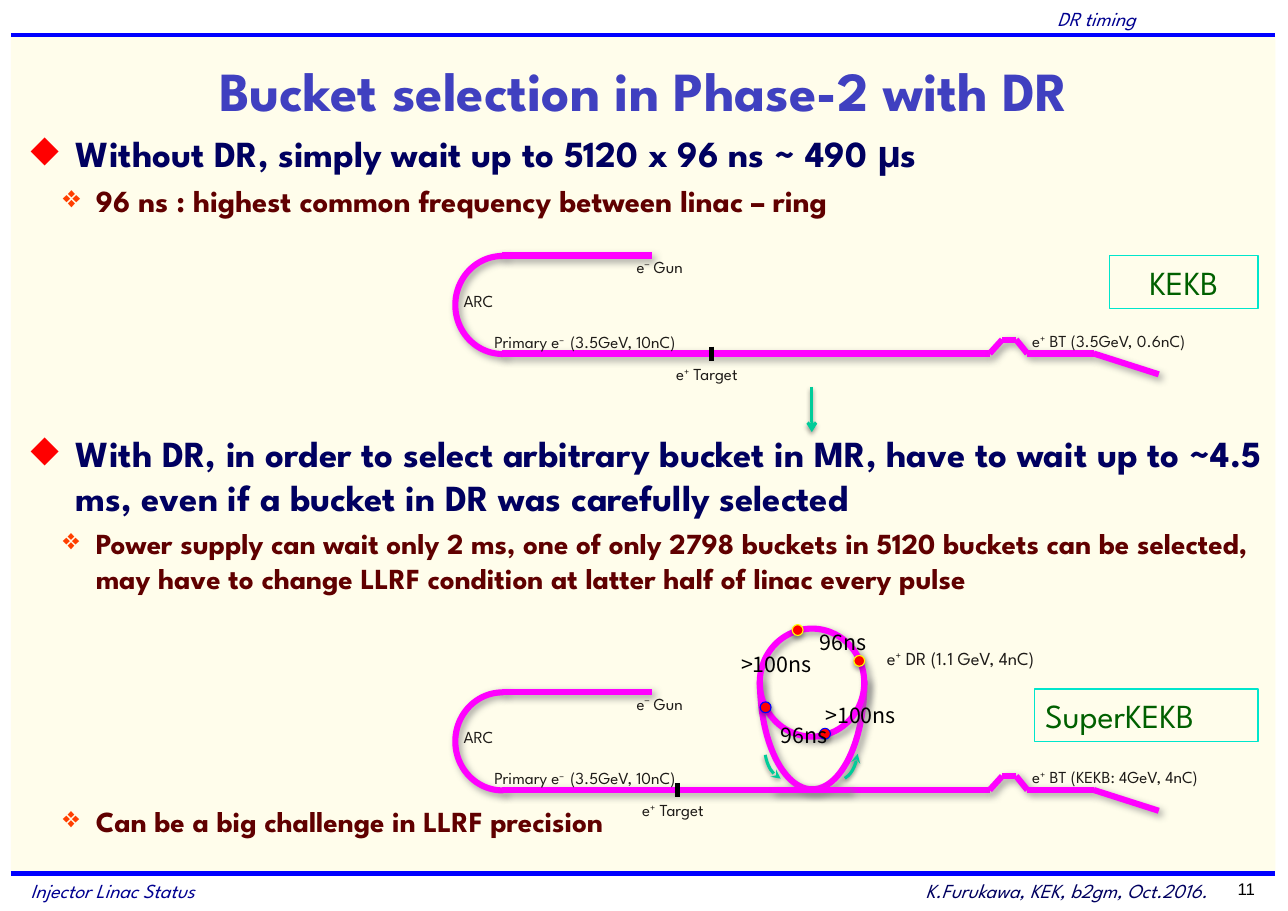
from itertools import pairwise

from lxml.etree import SubElement
from pptx import Presentation
from pptx.dml.color import RGBColor
from pptx.enum.shapes import MSO_CONNECTOR, MSO_SHAPE
from pptx.enum.text import MSO_ANCHOR, MSO_AUTO_SIZE, PP_ALIGN
from pptx.oxml.ns import qn
from pptx.util import Cm, Pt

FONT = "League Spartan"
BEAM, ARROW, INK = "FF00FF", "00CC99", "1E1B18"
# Shadows: colour, opacity %, blur pt, distance pt, direction in degrees
BEAM_SHADOW = ("808080", 75, 5, 3, 45)
ARROW_SHADOW = ("000000", 38, 3.1, 1.6, 90)
BUNCH_SHADOW = ("000000", 35, 3.1, 1.8, 90)


def color(value):
    return RGBColor.from_string(value)


def set_shadow(shape, shadow):
    """Replace the theme shadow by the given one, or by none."""
    properties = shape.element.spPr
    effects = properties.find(qn("a:effectLst"))
    if effects is None:
        effects = SubElement(properties, qn("a:effectLst"))
    if shadow:
        value, opacity, blur, distance, direction = shadow
        outer = SubElement(effects, qn("a:outerShdw"), blurRad=str(Pt(blur)),
                           dist=str(Pt(distance)), dir=str(direction * 60000))
        tint = SubElement(outer, qn("a:srgbClr"), val=value)
        SubElement(tint, qn("a:alpha"), val=str(opacity * 1000))


def add_arrowhead(shape, end, kind):
    SubElement(shape.element.spPr.find(qn("a:ln")), qn(f"a:{end}"), type=kind)


def add_line(slide, start, end, line=BEAM, width=4, shadow=None):
    connector = slide.shapes.add_connector(
        MSO_CONNECTOR.STRAIGHT, *(Cm(value) for value in (*start, *end)))
    connector.line.color.rgb = color(line)
    connector.line.width = Pt(width)
    set_shadow(connector, shadow)
    return connector


def add_outline(slide, kind, box, line=None, width=4, fill=None, shadow=None, adjustments=()):
    shape = slide.shapes.add_shape(kind, *(Cm(value) for value in box))
    shape.shadow.inherit = False
    for index, value in enumerate(adjustments):
        shape.adjustments[index] = value
    if fill:
        shape.fill.solid()
        shape.fill.fore_color.rgb = color(fill)
    else:
        shape.fill.background()
    if line:
        shape.line.color.rgb = color(line)
        shape.line.width = Pt(width)
    else:
        shape.line.fill.background()
    set_shadow(shape, shadow)
    return shape


def set_font(font, size, value, name=FONT, bold=False, italic=False):
    font.size, font.name, font.bold, font.italic = Pt(size), name, bold, italic
    font.color.rgb = color(value)


def add_text(slide, box, text, size, value, align=PP_ALIGN.LEFT, **style):
    text_box = slide.shapes.add_textbox(*(Cm(length) for length in box))
    frame = text_box.text_frame
    frame.word_wrap = True
    frame.text = text
    frame.paragraphs[0].alignment = align
    set_font(frame.paragraphs[0].runs[0].font, size, value, **style)
    return frame


def add_label(slide, box, text, size=11):
    """Add an unwrapped label; text between carets is superscript."""
    frame = slide.shapes.add_textbox(*(Cm(length) for length in box)).text_frame
    frame.word_wrap = False
    frame.auto_size = MSO_AUTO_SIZE.SHAPE_TO_FIT_TEXT
    frame.margin_left = frame.margin_right = frame.margin_top = frame.margin_bottom = 0
    for index, part in enumerate(text.split("^")):
        run = frame.paragraphs[0].add_run()
        run.text = part
        set_font(run.font, size, INK)
        if index % 2:
            run.font._element.set("baseline", "30000")


def draw_page_frame(slide, left, top, width, height):
    add_outline(slide, MSO_SHAPE.RECTANGLE, (left, top, width, height), fill="FFFDEB")
    bottom = top + height - 0.02
    for y in (top, bottom):
        add_line(slide, (left, y), (left + width, y), "0000FF", 3)
    add_text(slide, (17.32, 0.03, 9.11, 0.71), "DR timing", 13, "000090",
             PP_ALIGN.RIGHT, italic=True)
    add_text(slide, (0.46, bottom, 11.81, 0.84), "Injector Linac Status", 13, "000090",
             italic=True)
    add_text(slide, (17.32, bottom - 0.02, 10.77, 0.84), "K.Furukawa, KEK, b2gm, Oct.2016.",
             13, "000060", PP_ALIGN.RIGHT, italic=True)
    add_text(slide, (27.46, bottom, 1.73, 0.71), "11", 11, "000000", PP_ALIGN.RIGHT,
             name="Arial")


def draw_bullets(slide, box, items):
    """Fill the box with items of level, size, space before and text."""
    looks = [("◆", "FF0000", "000060", 1.04, -1.04), ("❖", "FF3F00", "600000", 1.5, -0.76)]
    frame = slide.shapes.add_textbox(*(Cm(length) for length in box)).text_frame
    frame.word_wrap = True
    for index, (level, size, space, text) in enumerate(items):
        bullet, bullet_color, text_color, margin, indent = looks[level]
        paragraph = frame.add_paragraph() if index else frame.paragraphs[0]
        paragraph.text = text
        paragraph.level = level
        paragraph.space_before = Pt(space)
        properties = paragraph._p.get_or_add_pPr()
        properties.set("marL", str(Cm(margin)))
        properties.set("indent", str(Cm(indent)))
        tint = SubElement(properties, qn("a:buClr"))
        SubElement(tint, qn("a:srgbClr"), val=bullet_color)
        SubElement(properties, qn("a:buChar"), char=bullet)
        set_font(paragraph.runs[0].font, size, text_color, bold=True)


def draw_linac(slide, left, top, target, transport):
    """Draw the beam line with its target at the given distance from the left."""
    beam_y = top + 2.26
    add_outline(slide, MSO_SHAPE.BLOCK_ARC, (left, top + 0.05, 2.26, 2.18), BEAM,
                shadow=BEAM_SHADOW, adjustments=(108, 0, 0)).rotation = 270
    add_line(slide, (left + 1.12, top), (left + 4.57, top), shadow=BEAM_SHADOW)
    track = [(1.12, 0), (12.36, 0), (12.65, -0.32), (12.97, -0.32), (13.23, 0),
             (14.76, 0), (16.26, 0.48)]
    for start, end in pairwise((left + x, beam_y + y) for x, y in track):
        add_line(slide, start, end, shadow=BEAM_SHADOW)
    target_x = left + target
    add_line(slide, (target_x, beam_y - 0.16), (target_x, beam_y + 0.17), "000000", 3)
    for x, y, width, text in [
        (0.23, 0.81, 0.86, "ARC"),
        (4.22, 0.03, 1.32, "e^−^ Gun"),
        (0.94, 1.75, 5.13, "Primary e^– ^ (3.5GeV, 10nC)"),
        (target - 0.81, 2.49, 1.63, "e^+^ Target"),
        (13.34, 1.73, 4.5, f"e^+^ BT {transport}"),
    ]:
        add_label(slide, (left + x, top + y, width, 0.48), text)


def draw_damping_ring(slide, left, top):
    add_outline(slide, MSO_SHAPE.BLOCK_ARC, (left - 1.24, top, 4.98, 2.41), BEAM,
                shadow=BEAM_SHADOW, adjustments=(53.99, 161.57, 0)).rotation = 270
    add_outline(slide, MSO_SHAPE.BLOCK_ARC, (left, top + 0.03, 2.49, 2.41), BEAM,
                shadow=BEAM_SHADOW, adjustments=(108, 108, 0)).rotation = 270
    for x, width, flips, end in [(1.42, 0.89, ["flipV"], "tailEnd"),
                                 (0.15, 1.02, ["flipH", "flipV"], "headEnd")]:
        arc = add_outline(slide, MSO_SHAPE.ARC, (left + x, top + 1.93, width, 1.55), ARROW, 2,
                          shadow=ARROW_SHADOW, adjustments=(168.33, 202.92))
        for flip in flips:
            arc.element.spPr.find(qn("a:xfrm")).set(flip, "1")
        add_arrowhead(arc, end, "stealth")
    for x, y, rim in [(2.21, 0.61, "FFFF00"), (0.79, -0.1, "FFFF00"),
                      (1.42, 2.29, "0000FF"), (0.05, 1.68, "0000FF")]:
        add_outline(slide, MSO_SHAPE.OVAL, (left + x, top + y, 0.25, 0.25), rim, 0.75,
                    "FF0000", BUNCH_SHADOW)
    for x, y, width, text in [(1.17, -0.13, 1.8, "96ns"), (-0.64, 0.38, 2.39, ">100ns"),
                              (1.3, 1.55, 2.39, ">100ns"), (0.28, 2.01, 1.8, "96ns")]:
        frame = add_text(slide, (left + x, top + y, width, 0.89), text, 14, "000000",
                         name="Noto Sans CJK JP")
        frame.word_wrap = False
    add_line(slide, (left + 0.33, top + 3.71), (left + 2.13, top + 3.71), shadow=BEAM_SHADOW)
    add_label(slide, (left + 2.97, top + 0.41, 4.22, 0.51), "e^+^ DR (1.1 GeV, 4nC)", 12)


def draw_machine_name(slide, box, text, align):
    frame = add_outline(slide, MSO_SHAPE.RECTANGLE, box, "00E6CC", 1).text_frame
    frame.text = text
    frame.vertical_anchor = MSO_ANCHOR.MIDDLE
    frame.paragraphs[0].alignment = align
    set_font(frame.paragraphs[0].runs[0].font, 22, "006000")


def main():
    presentation = Presentation()
    presentation.slide_width, presentation.slide_height = Cm(29.7), Cm(21)
    slide = presentation.slides.add_slide(presentation.slide_layouts[6])
    draw_page_frame(slide, 0.25, 0.81, 29.16, 19.35)
    title = add_text(slide, (0.46, 1.07, 28.78, 1.98), "Bucket selection in Phase-2 with DR",
                     36, "4040C0", PP_ALIGN.CENTER, bold=True)
    title.vertical_anchor = MSO_ANCHOR.MIDDLE
    draw_bullets(slide, (0.46, 2.9, 29.24, 16.94), [
        (0, 24, 0, "Without DR, simply wait up to 5120 x 96 ns ~ 490 μs"),
        (1, 20, 4, "96 ns : highest common frequency between linac – ring"),
        (0, 24, 139, "With DR, in order to select arbitrary bucket in MR, have to wait up to "
                     "~4.5 ms, even if a bucket in DR was carefully selected"),
        (1, 19, 4, "Power supply can wait only 2 ms, one of only 2798 buckets in 5120 buckets "
                   "can be selected, may have to change LLRF condition at latter half of linac "
                   "every pulse"),
        (1, 19, 136, "Can be a big challenge in LLRF precision"),
    ])
    draw_linac(slide, 10.46, 5.89, 5.94, "(3.5GeV, 0.6nC)")
    draw_machine_name(slide, (25.58, 5.89, 3.43, 1.22), "KEKB", PP_ALIGN.CENTER)
    arrow = add_line(slide, (18.72, 8.92), (18.72, 9.96), ARROW, 2, ARROW_SHADOW)
    add_arrowhead(arrow, "tailEnd", "arrow")
    draw_linac(slide, 10.46, 15.95, 5.16, "(KEKB: 4GeV, 4nC)")
    draw_machine_name(slide, (23.85, 15.88, 5.16, 1.22), "SuperKEKB", PP_ALIGN.LEFT)
    draw_damping_ring(slide, 17.48, 14.5)
    presentation.save("out.pptx")


if __name__ == "__main__":
    main()
